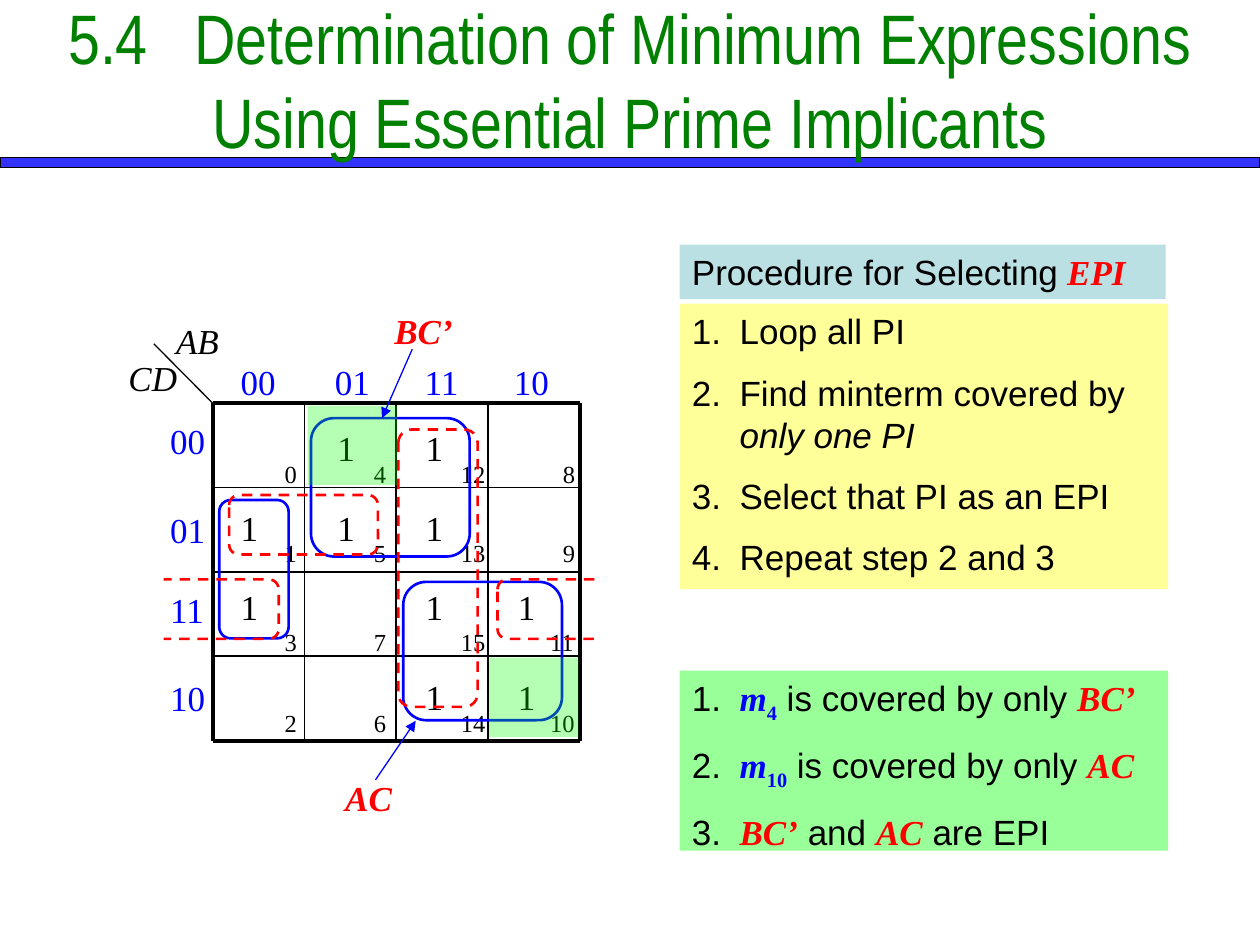
from dataclasses import dataclass, replace

from lxml.etree import SubElement
from pptx import Presentation
from pptx.dml.color import RGBColor
from pptx.enum.dml import MSO_LINE
from pptx.enum.shapes import MSO_CONNECTOR, MSO_SHAPE
from pptx.enum.text import MSO_ANCHOR, PP_ALIGN
from pptx.oxml.ns import qn
from pptx.util import Cm, Pt


@dataclass(frozen=True)
class Style:
    """Look of one run of text."""
    font: str
    size: int
    color: str
    bold: bool = False
    italic: bool = False
    baseline: int = 0


@dataclass(frozen=True)
class Theme:
    """Colours and text styles of the slide."""
    black: str = "000000"
    white: str = "FFFFFF"
    blue: str = "0000FF"
    red: str = "FF0000"
    bar: str = "3333FF"
    heading_fill: str = "BBE0E3"
    steps_fill: str = "FFFF99"
    result_fill: str = "99FF99"
    tint: str = "00FF00"
    title: Style = Style("Arial Narrow", 40, "008000")
    body: Style = Style("Arial", 20, "000000")
    emphasis: Style = Style("Arial", 20, "000000", italic=True)
    implicant: Style = Style("Times New Roman", 20, "FF0000", True, True)
    minterm: Style = Style("Times New Roman", 20, "0000FF", True, True)
    variable: Style = Style("Times New Roman", 20, "000000", italic=True)
    code: Style = Style("Times New Roman", 20, "0000FF")
    one: Style = Style("Times New Roman", 20, "000000")
    index: Style = Style("Times New Roman", 14, "000000")


THEME = Theme()
SUBSCRIPT = replace(THEME.minterm, italic=False, baseline=-25000)
GRAY_ORDER = (0, 1, 3, 2)
ONES = {1, 3, 4, 5, 10, 11, 12, 13, 14, 15}
MAP_LEFT, MAP_TOP, CELL_WIDTH, CELL_HEIGHT = 4.29, 8.13, 1.85, 1.7
ONE_LEFTS, ONE_TOPS = (4.6, 6.55, 8.33, 10.19), (8.48, 10.08, 11.68, 13.49)
INDEX_RIGHTS, INDEX_TOPS = (6.25, 8.05, 10.06, 11.86), (9.12, 10.72, 12.52, 14.14)
CODE_LEFTS, CODE_TOPS = (4.6, 6.5, 8.31, 10.11), (8.33, 10.13, 11.73, 13.51)


def format_run(run, style):
    """Apply a text style to a run."""
    font = run.font
    font.name, font.size = style.font, Pt(style.size)
    font.bold, font.italic = style.bold, style.italic
    font.color.rgb = RGBColor.from_string(style.color)
    if style.baseline:
        font._element.set("baseline", str(style.baseline))


def add_spans(paragraph, spans):
    """Fill a left-aligned paragraph with styled spans."""
    paragraph.alignment = PP_ALIGN.LEFT
    for text, style in spans:
        run = paragraph.add_run()
        run.text = text
        format_run(run, style)


def add_label(slide, left, top, width, height, text, style):
    """Add a one-line text box."""
    box = slide.shapes.add_textbox(Cm(left), Cm(top), Cm(width), Cm(height))
    box.text_frame.word_wrap = False
    box.text_frame.text = text
    format_run(box.text_frame.paragraphs[0].runs[0], style)


def add_title(slide, text):
    """Add the centred two-line title."""
    box = slide.shapes.add_textbox(0, 0, Cm(25.4), Cm(3.18))
    frame = box.text_frame
    frame.word_wrap, frame.vertical_anchor = True, MSO_ANCHOR.MIDDLE
    paragraph = frame.paragraphs[0]
    paragraph.text = text
    paragraph.alignment = PP_ALIGN.CENTER
    for run in paragraph.runs:
        format_run(run, THEME.title)


def add_block(slide, bounds, fill, opacity=100):
    """Add a filled rectangle without outline."""
    shape = slide.shapes.add_shape(MSO_SHAPE.RECTANGLE, *map(Cm, bounds))
    shape.shadow.inherit = False
    shape.fill.solid()
    shape.fill.fore_color.rgb = RGBColor.from_string(fill)
    shape.line.fill.background()
    if opacity < 100:
        color = shape._element.spPr.find(qn("a:solidFill"))[0]
        SubElement(color, qn("a:alpha")).set("val", str(opacity * 1000))
    return shape


def add_panel(slide, bounds, fill, items, hanging=True, numbered=False):
    """Add a filled panel with one paragraph per item."""
    frame = add_block(slide, bounds, fill).text_frame
    frame.word_wrap, frame.vertical_anchor = True, MSO_ANCHOR.TOP
    for position, spans in enumerate(items):
        paragraph = frame.add_paragraph() if position else frame.paragraphs[0]
        add_spans(paragraph, spans)
        if position:
            paragraph.space_before = Pt(11)
        properties = paragraph._p.get_or_add_pPr()
        if hanging:
            properties.set("marL", str(Cm(0.96)))
            properties.set("indent", str(-Cm(0.96)))
        if numbered:
            SubElement(properties, qn("a:buAutoNum")).set("type", "arabicPeriod")


def add_line(slide, start, end, color, width, arrow=False):
    """Add a straight line, with an arrowhead at its end if asked."""
    connector = slide.shapes.add_connector(MSO_CONNECTOR.STRAIGHT, *map(Cm, start + end))
    connector.line.color.rgb = RGBColor.from_string(color)
    connector.line.width = Pt(width)
    properties = connector._element.spPr
    if arrow:
        SubElement(properties.find(qn("a:ln")), qn("a:tailEnd")).set("type", "triangle")
    SubElement(properties, qn("a:effectLst"))


def add_loop(slide, bounds, color, dashed=False):
    """Add a rounded loop around adjacent ones."""
    loop = slide.shapes.add_shape(MSO_SHAPE.ROUNDED_RECTANGLE, *map(Cm, bounds))
    loop.shadow.inherit = False
    loop.fill.background()
    loop.line.color.rgb = RGBColor.from_string(color)
    loop.line.width = Pt(1.5)
    if dashed:
        loop.line.dash_style = MSO_LINE.DASH


def add_map_grid(slide):
    """Draw the map lines with a heavy border, and the axis names."""
    right, bottom = MAP_LEFT + 4 * CELL_WIDTH, MAP_TOP + 4 * CELL_HEIGHT
    for step in range(5):
        width = 2.25 if step in (0, 4) else 1
        x, y = MAP_LEFT + step * CELL_WIDTH, MAP_TOP + step * CELL_HEIGHT
        add_line(slide, (MAP_LEFT, y), (right, y), THEME.black, width)
        add_line(slide, (x, MAP_TOP), (x, bottom), THEME.black, width)
    add_line(slide, (MAP_LEFT, MAP_TOP), (3.1, 6.93), THEME.black, 0.75)
    add_label(slide, 3.3, 6.32, 1.37, 1.1, "AB", THEME.variable)
    add_label(slide, 2.34, 7.06, 1.5, 1.1, "CD", THEME.variable)


def add_map_values(slide):
    """Write the Gray codes, minterm numbers and ones."""
    for position, gray in enumerate(GRAY_ORDER):
        code = format(gray, "02b")
        add_label(slide, CODE_LEFTS[position], 7.14, 1.22, 1.1, code, THEME.code)
        add_label(slide, 3.18, CODE_TOPS[position], 1.22, 1.1, code, THEME.code)
    for column, high in enumerate(GRAY_ORDER):
        for row, low in enumerate(GRAY_ORDER):
            minterm = 4 * high + low
            width = 0.76 if minterm < 10 else 1.02
            add_label(slide, INDEX_RIGHTS[column] - width, INDEX_TOPS[row],
                      width, 0.84, str(minterm), THEME.index)
            if minterm in ONES:
                add_label(slide, ONE_LEFTS[column], ONE_TOPS[row], 0.86, 1.1, "1", THEME.one)


def add_map_loops(slide):
    """Draw the prime implicants and mark the deciding minterms."""
    for bounds in ((6.27, 8.43, 3.2, 2.79), (8.13, 11.73, 3.2, 2.79), (4.42, 10.08, 1.4, 2.79)):
        add_loop(slide, bounds, THEME.blue)
    for bounds in ((4.62, 9.98, 3, 1.2), (8.03, 8.66, 1.6, 5.59),
                   (2.62, 11.68, 3, 1.2), (10.03, 11.68, 3, 1.2)):
        add_loop(slide, bounds, THEME.red, dashed=True)
    for left in (12.04, 1.9):
        add_block(slide, (left, 11.3, 1.4, 2), THEME.white)
    for left, top in ((6.2, 8.18), (9.86, 13.26)):
        add_block(slide, (left, top, 1.8, 1.6), THEME.tint, opacity=29)
    add_label(slide, 7.7, 6.12, 1.68, 1.1, "BC’", THEME.implicant)
    add_line(slide, (8.31, 7.04), (7.7, 8.43), THEME.blue, 0.75, arrow=True)
    add_label(slide, 6.71, 15.52, 1.45, 1.1, "AC", THEME.implicant)
    add_line(slide, (7.57, 15.72), (8.38, 14.53), THEME.blue, 0.75, arrow=True)


def add_panels(slide):
    """Add the procedure and its result."""
    body, implicant, minterm = THEME.body, THEME.implicant, THEME.minterm
    add_panel(slide, (13.7, 4.93, 9.8, 1.1), THEME.heading_fill,
              [[("Procedure for Selecting", body), (" EPI", implicant)]], hanging=False)
    steps = [[("Loop all PI", body)],
             [("Find minterm covered by ", body), ("only one PI", THEME.emphasis)],
             [("Select that PI as an EPI", body)],
             [("Repeat step 2 and 3", body)]]
    add_panel(slide, (13.7, 6.12, 9.85, 5.76), THEME.steps_fill, steps, numbered=True)
    results = [[(f"{number}.\t", body), ("m", minterm), (index, SUBSCRIPT),
                (" is covered by only ", body), (name, implicant)]
               for number, index, name in ((1, "4", "BC’"), (2, "10", "AC"))]
    results.append([("3.\t", body), ("BC’", implicant), (" and ", body),
                    ("AC", implicant), (" are EPI", body)])
    add_panel(slide, (13.7, 13.52, 9.85, 3.63), THEME.result_fill, results)


def main():
    """Build and save the slide."""
    presentation = Presentation()
    presentation.slide_width, presentation.slide_height = Cm(25.4), Cm(19.05)
    slide = presentation.slides.add_slide(presentation.slide_layouts[6])
    bar = add_block(slide, (0, 3.18, 25.4, 0.2), THEME.bar)
    bar.line.color.rgb = RGBColor.from_string(THEME.black)
    bar.line.width = Pt(0.75)
    add_title(slide, "5.4\tDetermination of Minimum Expressions\nUsing Essential Prime Implicants")
    add_panels(slide)
    add_map_grid(slide)
    add_map_values(slide)
    add_map_loops(slide)
    presentation.save("out.pptx")


if __name__ == "__main__":
    main()
